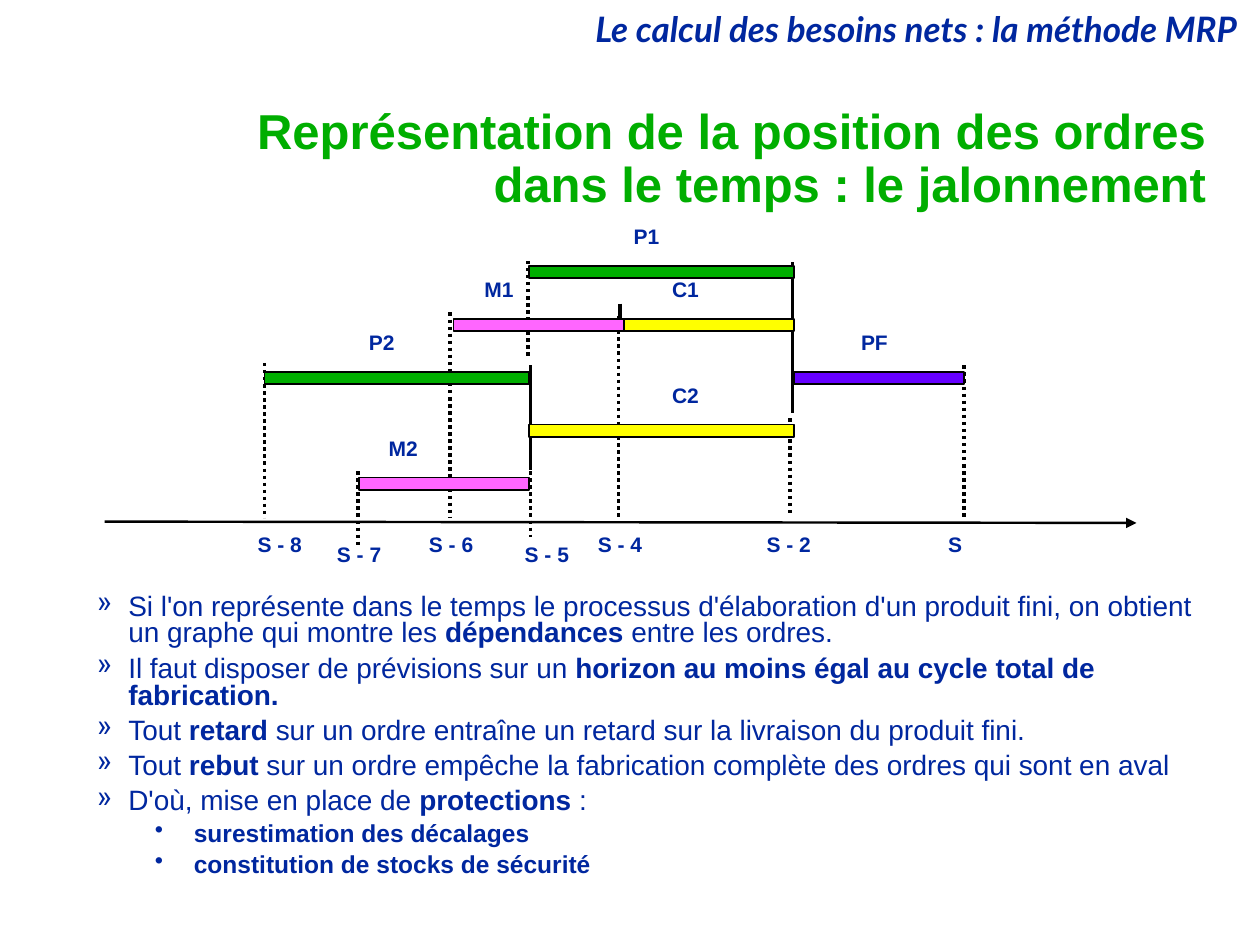
from collections import namedtuple

from lxml.etree import SubElement
from pptx import Presentation
from pptx.dml.color import RGBColor
from pptx.enum.dml import MSO_LINE
from pptx.enum.shapes import MSO_CONNECTOR, MSO_SHAPE
from pptx.enum.text import MSO_ANCHOR, PP_ALIGN
from pptx.oxml.ns import qn
from pptx.util import Inches, Pt

NAVY = RGBColor(0x00, 0x27, 0x9F)
GREEN = RGBColor(0x00, 0xAE, 0x00)
YELLOW = RGBColor(0xFF, 0xFF, 0x00)
PINK = RGBColor(0xFF, 0x66, 0xFF)
VIOLET = RGBColor(0x66, 0x00, 0xFF)
BLACK = RGBColor(0x00, 0x00, 0x00)

Box = namedtuple("Box", "left top width height")

WEEK_X = {8: 1.3, 7: 2.05, 6: 2.8, 5: 3.4, 4: 4.15, 2: 5.5, 0: 6.85}
WEEK_LABELS = [
    ("S - 8", 1.42, 2.44), ("S - 7", 2.05, 2.52), ("S - 6", 2.78, 2.44),
    ("S - 5", 3.54, 2.52), ("S - 4", 4.12, 2.44), ("S - 2", 5.46, 2.44),
    ("S", 6.78, 2.44),
]
ORDERS = [
    ("PF", 2, 2, 0, VIOLET, 6.14),
    ("C2", 3, 5, 2, YELLOW, 4.64),
    ("C1", 1, 4, 2, YELLOW, 4.64),
    ("P1", 0, 5, 2, GREEN, 4.33),
    ("P2", 2, 8, 5, GREEN, 2.23),
    ("M2", 4, 7, 5, PINK, 2.4),
    ("M1", 1, 6, 4, PINK, 3.16),
]
DEPENDENCIES = [(5.49, 0.33, 1.53), (4.12, 0.66, 0.78), (3.41, 1.15, 1.98)]
MILESTONES = [
    (6.85, 1.15, 2.37), (5.47, 1.57, 2.35), (4.11, 0.76, 2.36),
    (3.39, 0.32, 1.1), (3.41, 1.99, 2.51), (1.3, 1.13, 2.36),
    (2.77, 0.73, 2.36), (2.04, 1.99, 2.59),
]
ROW_PITCH = 0.42
FIRST_BAR = 0.36
BAR_HEIGHT = 0.1

POINTS = [
    ("Si l'on représente dans le temps le processus d'élaboration d'un produit fini, "
     "on obtient un graphe qui montre les **dépendances** entre les ordres.", 2),
    ("Il faut disposer de prévisions sur un "
     "**horizon au moins égal au cycle total de fabrication.**", 2),
    ("Tout **retard** sur un ordre entraîne un retard sur la livraison du produit fini.", 2),
    ("Tout **rebut** sur un ordre empêche la fabrication complète "
     "des ordres qui sont en aval", 2),
    ("D'où, mise en place de **protections** :", 2),
    ("**surestimation des décalages**", 3),
    ("**constitution de stocks de sécurité**", 3),
]
LEVEL_STYLES = {2: ("»", 16, 0.5, -0.25), 3: ("•", 14, 1.02, -0.31)}


def style_run(run, size, color=NAVY, bold=True, italic=False, font="Arial"):
    """Apply the font settings of one run."""
    run.font.name = font
    run.font.size = Pt(size)
    run.font.bold = bold
    run.font.italic = italic
    run.font.color.rgb = color


def add_text(slide, box, text, size, align, wrap=True, anchor=MSO_ANCHOR.TOP, **style):
    """Add a one-paragraph text box."""
    frame = slide.shapes.add_textbox(*box).text_frame
    frame.word_wrap = wrap
    frame.vertical_anchor = anchor
    frame.text = text
    paragraph = frame.paragraphs[0]
    paragraph.alignment = align
    paragraph.line_spacing = 0.9
    style_run(paragraph.runs[0], size, **style)


def add_line(slide, start, end, width, dash=None):
    """Add a straight black line without shadow."""
    line = slide.shapes.add_connector(MSO_CONNECTOR.STRAIGHT, *start, *end)
    line.line.color.rgb = BLACK
    line.line.width = Pt(width)
    if dash:
        line.line.dash_style = dash
    SubElement(line._element.spPr, qn("a:effectLst"))
    return line


def add_label(slide, text, center, top):
    """Add a small label centred on a horizontal position."""
    width = Inches(0.61)
    box = Box(center - width // 2, top, width, Inches(0.31))
    add_text(slide, box, text, 12, PP_ALIGN.CENTER, wrap=False)


def add_axis(slide, box):
    """Draw the time arrow and its week labels."""
    axis = add_line(slide, (box.left + Inches(0.03), box.top + Inches(2.39)),
                    (box.left + box.width, box.top + Inches(2.4)), 1.38)
    SubElement(axis.line._get_or_add_ln(), qn("a:tailEnd"), type="triangle")
    for week, center, top in WEEK_LABELS:
        add_label(slide, week, box.left + Inches(center), box.top + Inches(top))


def add_order(slide, box, order):
    """Draw one order as a labelled bar between two weeks."""
    name, row, start, end, color, label_center = order
    row_top = box.top + Inches(row * ROW_PITCH)
    bar = slide.shapes.add_shape(
        MSO_SHAPE.RECTANGLE, box.left + Inches(WEEK_X[start]), row_top + Inches(FIRST_BAR),
        Inches(WEEK_X[end] - WEEK_X[start]), Inches(BAR_HEIGHT))
    bar.shadow.inherit = False
    bar.fill.solid()
    bar.fill.fore_color.rgb = color
    bar.line.color.rgb = BLACK
    bar.line.width = Pt(1)
    add_label(slide, name, box.left + Inches(label_center), row_top)


def add_schedule(slide, box):
    """Draw the staggered orders above the time axis."""
    add_axis(slide, box)
    for verticals, dash in ((DEPENDENCIES, None), (MILESTONES, MSO_LINE.ROUND_DOT)):
        for x, top, bottom in verticals:
            add_line(slide, (box.left + Inches(x), box.top + Inches(top)),
                     (box.left + Inches(x), box.top + Inches(bottom)), 0, dash)
    for order in ORDERS:
        add_order(slide, box, order)


def add_points(slide, box):
    """Add the bulleted comments, with bold between double asterisks."""
    frame = slide.shapes.add_textbox(*box).text_frame
    frame.word_wrap = True
    for index, (text, level) in enumerate(POINTS):
        bullet, size, margin, indent = LEVEL_STYLES[level]
        paragraph = frame.add_paragraph() if index else frame.paragraphs[0]
        paragraph.level = level - 1
        paragraph.line_spacing = 0.8
        paragraph.space_before = Pt(0.3 * size)
        properties = paragraph._p.get_or_add_pPr()
        properties.set("marL", str(Inches(margin)))
        properties.set("indent", str(Inches(indent)))
        SubElement(properties, qn("a:buChar"), char=bullet)
        for part, words in enumerate(text.split("**")):
            if words:
                run = paragraph.add_run()
                run.text = words
                style_run(run, size, bold=part % 2 == 1)


def main():
    """Build the slide and save it."""
    deck = Presentation()
    deck.slide_width, deck.slide_height = Inches(10), Inches(7.5)
    slide = deck.slides.add_slide(deck.slide_layouts[6])
    add_text(slide, Box(0, Inches(0.05), Inches(9.92), Inches(0.4)),
             "Le calcul des besoins nets : la méthode MRP", 20, PP_ALIGN.RIGHT,
             italic=True, font="Lato")
    add_text(slide, Box(Inches(1.23), Inches(0.83), Inches(8.44), Inches(0.88)),
             "Représentation de la position des ordres dans le temps : le jalonnement",
             28, PP_ALIGN.RIGHT, anchor=MSO_ANCHOR.MIDDLE, color=GREEN)
    add_points(slide, Box(Inches(0.42), Inches(4.67), Inches(9.25), Inches(2.25)))
    add_schedule(slide, Box(Inches(0.8), Inches(1.75), Inches(8.22), Inches(2.83)))
    deck.save("out.pptx")


if __name__ == "__main__":
    main()
